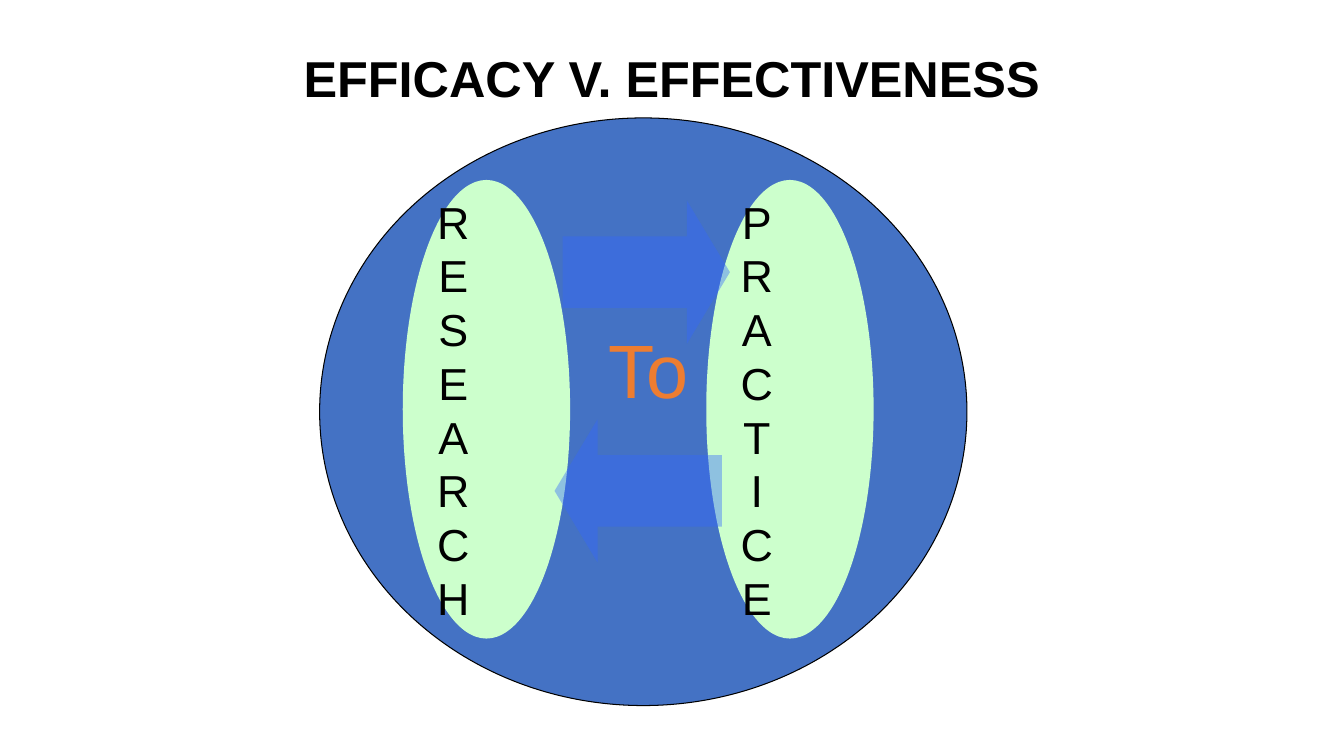
"""Build the slide on efficacy versus effectiveness, linking research and practice."""
import pptx
import pptx.util
import pptx.dml.color
import pptx.enum.shapes
import pptx.enum.text
import pptx.oxml
import pptx.oxml.ns

Inches = pptx.util.Inches
Pt = pptx.util.Pt
SHAPES = pptx.enum.shapes.MSO_SHAPE
ANCHOR = pptx.enum.text.MSO_ANCHOR

TITLE = ("EFFICACY V. EFFECTIVENESS", (2.5, 0.42, 8.33, 0.71))
LINK = ("To", (4.88, 3.15, 3.11, 1.01))
CIRCLE = (3.17, 1.17, 6.42, 5.83)
FIELDS = [("PRACTICE", (5.56, 3.23, 4.55, 1.66)), ("RESEARCH", (2.55, 3.23, 4.55, 1.66))]
ARROWS = [((5.58, 1.99, 1.66, 1.42), 0), ((5.5, 4.16, 1.66, 1.42), 180)]

THEME = {
    "font": "Arial",
    "text": "000000",
    "link": "ED7D31",
    "circle": "4472C4",
    "field": "CCFFCC",
    "arrow": "3366FF",
    "arrow_alpha": 40,
    "title_size": 36,
    "field_size": 32,
    "link_size": 54,
}


def color(name):
    return pptx.dml.color.RGBColor.from_string(THEME[name])


def write(shape, lines, size, text_color, bold=False, **frame_format):
    frame = shape.text_frame
    for name, value in frame_format.items():
        setattr(frame, name, value)
    frame.text = "\n".join(lines)
    font_format = {"name": THEME["font"], "size": Pt(THEME[size]), "bold": bold}
    for paragraph in frame.paragraphs:
        paragraph.alignment = pptx.enum.text.PP_ALIGN.CENTER
        font = paragraph.runs[0].font
        for name, value in font_format.items():
            setattr(font, name, value)
        font.color.rgb = color(text_color)


def add_figure(slide, kind, box, fill, rotation=0):
    shape = slide.shapes.add_shape(kind, *map(Inches, box))
    shape.shadow.inherit = False
    shape.rotation = rotation
    shape.fill.solid()
    shape.fill.fore_color.rgb = color(fill)
    shape.line.fill.background()
    return shape


def add_circle(slide):
    circle = add_figure(slide, SHAPES.OVAL, CIRCLE, "circle")
    circle.line.color.rgb = color("text")
    circle.line.width = Pt(0.75)


def add_field(slide, word, box):
    field = add_figure(slide, SHAPES.OVAL, box, "field", 270)
    write(field, word, "field_size", "text", word_wrap=False, vertical_anchor=ANCHOR.MIDDLE)
    field.text_frame._txBody.bodyPr.set("vert", "eaVert")


def add_arrow(slide, box, rotation):
    arrow = add_figure(slide, SHAPES.RIGHT_ARROW, box, "arrow", rotation)
    arrow.adjustments[1] = 0.3
    fill_color = arrow.fill._xPr.find(".//" + pptx.oxml.ns.qn("a:srgbClr"))
    alpha = pptx.oxml.parse_xml(f'<a:alpha {pptx.oxml.ns.nsdecls("a")}/>')
    alpha.set("val", str(THEME["arrow_alpha"] * 1000))
    fill_color.append(alpha)


def add_title(slide):
    text, box = TITLE
    title = slide.shapes.title
    for name, value in zip(("left", "top", "width", "height"), box):
        setattr(title, name, Inches(value))
    write(title, [text], "title_size", "text", bold=True, word_wrap=True,
          vertical_anchor=ANCHOR.TOP, auto_size=pptx.enum.text.MSO_AUTO_SIZE.SHAPE_TO_FIT_TEXT)


def add_link(slide):
    text, box = LINK
    link = slide.shapes.add_textbox(*map(Inches, box))
    write(link, [text], "link_size", "link", word_wrap=True,
          auto_size=pptx.enum.text.MSO_AUTO_SIZE.SHAPE_TO_FIT_TEXT)


def main():
    presentation = pptx.Presentation()
    presentation.slide_width = Inches(13.33)
    presentation.slide_height = Inches(7.5)
    slide = presentation.slides.add_slide(presentation.slide_layouts[5])
    add_circle(slide)
    for word, box in FIELDS:
        add_field(slide, word, box)
    add_title(slide)
    add_link(slide)
    for box, rotation in ARROWS:
        add_arrow(slide, box, rotation)
    presentation.save("out.pptx")


if __name__ == "__main__":
    main()
